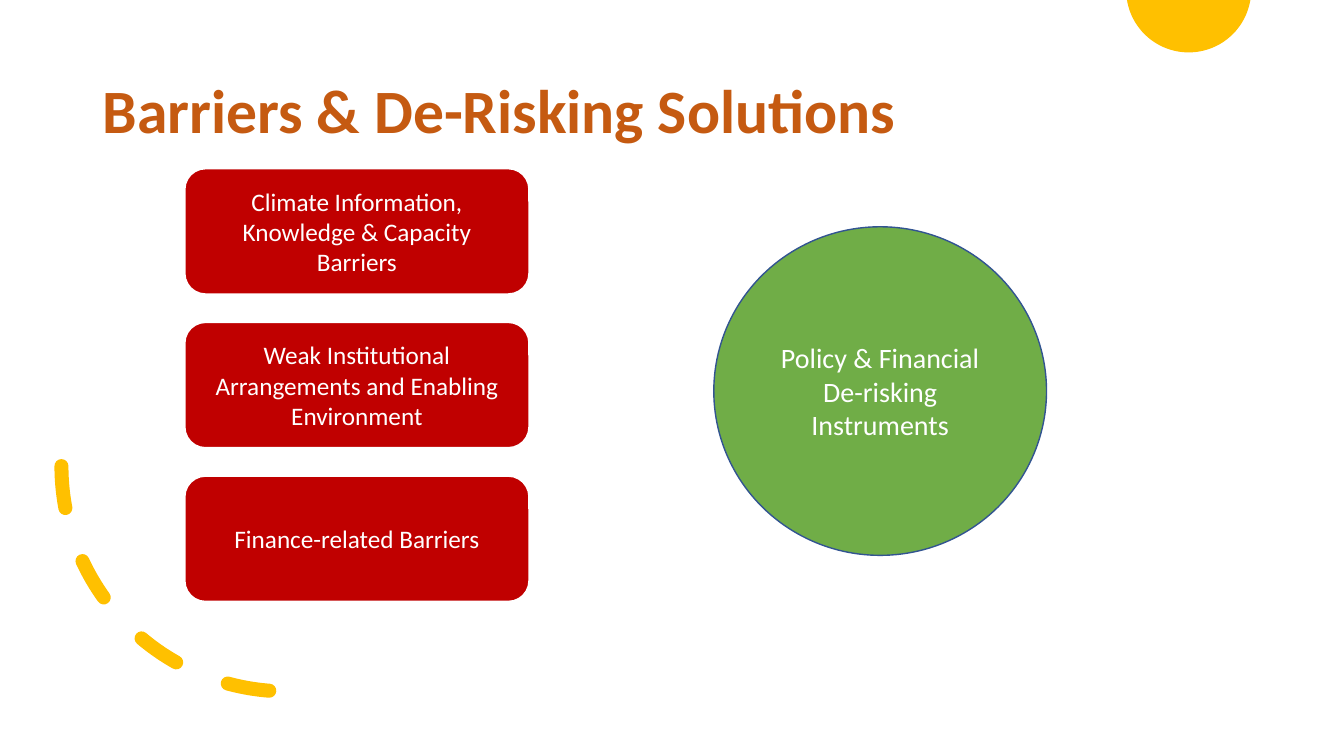
import math
from pptx import Presentation
from pptx.dml.color import RGBColor
from pptx.enum.dml import MSO_LINE
from pptx.enum.shapes import MSO_SHAPE
from pptx.enum.text import MSO_ANCHOR, PP_ALIGN
from pptx.oxml.ns import qn
from pptx.util import Inches, Pt

ROUNDED, ELLIPSE, ARC = MSO_SHAPE.ROUNDED_RECTANGLE, MSO_SHAPE.OVAL, MSO_SHAPE.ARC
MIDDLE, LEFT, CENTER = MSO_ANCHOR.MIDDLE, PP_ALIGN.LEFT, PP_ALIGN.CENTER
DASH = MSO_LINE.DASH

COLORS = {
    "white": "FFFFFF",
    "yellow": "FFC000",
    "title": "C55A11",
    "barrier": "C00000",
    "solution": "70AD47",
    "solution_line": "325491",
}
BARRIERS = [
    "Climate Information, Knowledge & Capacity Barriers",
    "Weak Institutional Arrangements and Enabling Environment",
    "Finance-related Barriers",
]


def color(name):
    return RGBColor.from_string(COLORS[name])


def write(box, text, align, **font_values):
    """Put one middle-anchored Calibri paragraph into the box."""
    frame = box.text_frame
    frame.word_wrap = True
    frame.vertical_anchor = MIDDLE
    para = frame.paragraphs[0]
    para.alignment = align
    span = para.add_run()
    span.text = text
    span.font.color.rgb = color(font_values.pop("color"))
    for name, value in {"name": "Calibri", **font_values}.items():
        setattr(span.font, name, value)
    return para


deck = Presentation()
deck.slide_width, deck.slide_height = Inches(13.33), Inches(7.5)
page = deck.slides.add_slide(deck.slide_layouts[6])

# Sun cut off by the top edge
center_x, center_y, radius = 11.79, -0.1, 0.62
edge_angle = math.asin(-center_y / radius)
steps = 60
angles = [edge_angle + (math.pi - 2 * edge_angle) * step / steps for step in range(steps + 1)]
points = [
    (Inches(center_x + radius * math.cos(angle)),
     max(0, Inches(center_y + radius * math.sin(angle))))
    for angle in angles
]
builder = page.shapes.build_freeform(*points[0])
builder.add_line_segments(points[1:], close=True)
sun = builder.convert_to_shape()
sun.shadow.inherit = False
sun.fill.solid()
sun.fill.fore_color.rgb = color("yellow")
sun.line.fill.background()

title = page.shapes.add_textbox(Inches(0.92), Inches(0.4), Inches(11.5), Inches(1.45))
title_para = write(title, "Barriers & De-Risking Solutions", LEFT,
                   size=Pt(44), bold=True, color="title")
title_para.line_spacing = 0.9

# Dashed quarter circle at the lower left
arc = page.shapes.add_shape(ARC, Inches(0.61), Inches(2.39), Inches(4.47), Inches(4.47))
arc.shadow.inherit = False
arc.rotation = 90
arc.element.spPr.find(qn("a:xfrm")).set("flipV", "1")
arc.fill.background()
arc.line.color.rgb = color("yellow")
arc.line.width = Pt(10)
arc.line.dash_style = DASH
arc.line._get_or_add_ln().set("cap", "rnd")

# Barriers on the left, the solution on the right
nodes = [
    (ROUNDED, 1.83, 1.67 + 1.525 * row, 3.42, 1.25, text, 18, "barrier", "white", 1.5)
    for row, text in enumerate(BARRIERS)
]
nodes.append((ELLIPSE, 7.08, 2.25, 3.3, 3.26, "Policy & Financial De-risking Instruments",
              20, "solution", "solution_line", 1))
for kind, left, top, width, height, text, size, fill, line, weight in nodes:
    node = page.shapes.add_shape(kind, Inches(left), Inches(top), Inches(width), Inches(height))
    node.shadow.inherit = False
    node.fill.solid()
    node.fill.fore_color.rgb = color(fill)
    node.line.color.rgb = color(line)
    node.line.width = Pt(weight)
    write(node, text, CENTER, size=Pt(size), color="white")

deck.save("out.pptx")
